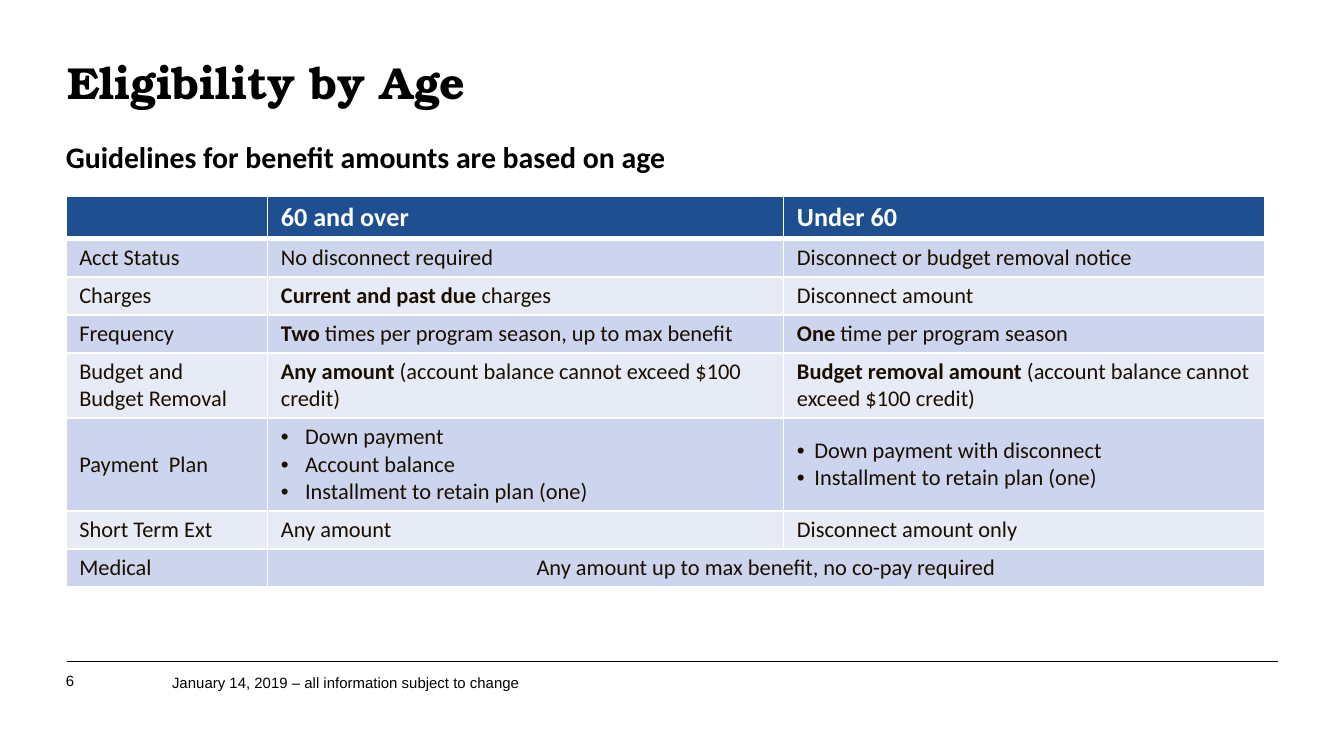
from dataclasses import dataclass

from lxml.etree import SubElement
from pptx import Presentation
from pptx.dml.color import RGBColor
from pptx.enum.shapes import MSO_CONNECTOR
from pptx.enum.text import MSO_ANCHOR as Anchor, MSO_AUTO_SIZE as AutoSize, PP_ALIGN as Align
from pptx.oxml.ns import qn
from pptx.util import Emu, Pt

EMU_PER_PX = 9144  # 100 px to the inch


@dataclass(frozen=True)
class Style:
    font: str
    size: int
    color: str
    bold: bool = False


@dataclass(frozen=True)
class Theme:
    black: str = "000000"
    white: str = "FFFFFF"
    header_fill: str = "1D4F91"
    bands: tuple[str, str] = ("CCD5ED", "E7EBF6")
    title: Style = Style("TeX Gyre Bonum", 24, "000000", True)
    subtitle: Style = Style("Calibri", 16, "000000", True)
    header: Style = Style("Calibri", 14, "FFFFFF", True)
    cell: Style = Style("Calibri", 12, "1A0E00")
    footer: Style = Style("Arial", 8, "000000")


@dataclass(frozen=True)
class Box:
    left: int
    top: int
    width: int
    height: int

    def emu(self) -> tuple[Emu, ...]:
        return tuple(px(n) for n in (self.left, self.top, self.width, self.height))


@dataclass(frozen=True)
class Cell:
    """Lines of a cell; lead is bold text before the first, indent makes bullets."""
    lines: tuple[str, ...]
    lead: str = ""
    indent: int = 0
    span: int = 1
    align: Align = Align.LEFT


@dataclass(frozen=True)
class Row:
    height: int
    cells: tuple[Cell, ...]


THEME = Theme()
COLUMNS = (150, 384, 358)
ROWS = (
    Row(31, (Cell(("",)), Cell(("60 and over",)), Cell(("Under 60",)))),
    Row(28, (Cell(("Acct Status",)), Cell(("No disconnect required",)),
             Cell(("Disconnect or budget removal notice",)))),
    Row(28, (Cell(("Charges",)), Cell(("charges",), lead="Current and past due "),
             Cell(("Disconnect amount",)))),
    Row(28, (Cell(("Frequency",)),
             Cell((" times per program season, up to max benefit",), lead="Two"),
             Cell((" time per program season",), lead="One"))),
    Row(48, (Cell(("Budget and", "Budget Removal")),
             Cell((" (account balance cannot exceed $100 credit)",), lead="Any amount"),
             Cell(("(account balance cannot exceed $100 credit)",),
                  lead="Budget removal amount "))),
    Row(68, (Cell(("Payment  Plan",)),
             Cell(("Down payment", "Account balance", "Installment to retain plan (one)"),
                  indent=18),
             Cell(("Down payment with disconnect", "Installment to retain plan (one)"),
                  indent=13))),
    Row(28, (Cell(("Short Term Ext",)), Cell(("Any amount",)),
             Cell(("Disconnect amount only",)))),
    Row(28, (Cell(("Medical",)),
             Cell(("Any amount up to max benefit, no co-pay required",),
                  span=2, align=Align.CENTER))),
)


def px(n: int) -> Emu:
    return Emu(n * EMU_PER_PX)


def rgb(color: str) -> RGBColor:
    return RGBColor.from_string(color)


def format_run(r, style: Style, bold: bool) -> None:
    r.font.name, r.font.size, r.font.bold = style.font, Pt(style.size), bold
    r.font.color.rgb = rgb(style.color)


def set_text(sp, text: str, style: Style, box: Box):
    """Place a shape and give it one left-aligned paragraph without insets."""
    sp.left, sp.top, sp.width, sp.height = box.emu()
    tf = sp.text_frame
    tf.text = text
    tf.word_wrap, tf.auto_size, tf.vertical_anchor = True, AutoSize.NONE, Anchor.TOP
    tf.margin_left = tf.margin_top = tf.margin_right = tf.margin_bottom = 0
    p = tf.paragraphs[0]
    p.alignment, p.space_before = Align.LEFT, Pt(0)
    format_run(p.runs[0], style, style.bold)
    return p


def set_bullet(p, indent: int) -> None:
    """Hang the paragraph by indent with a bullet, or remove the bullet at 0."""
    ppr = p._p.get_or_add_pPr()
    ppr.set("marL", str(px(indent)))
    ppr.set("indent", str(-px(indent)))
    if indent:
        SubElement(ppr, qn("a:buFont"), typeface="Arial")
        SubElement(ppr, qn("a:buChar"), char="•")
    else:
        SubElement(ppr, qn("a:buNone"))


def set_borders(tc, top: int, bottom: int) -> None:
    tcpr = tc._tc.get_or_add_tcPr()
    for side, width in (("L", 1), ("R", 1), ("T", top), ("B", bottom)):
        ln = SubElement(tcpr, qn(f"a:ln{side}"), w=str(Pt(width)))
        fill = SubElement(ln, qn("a:solidFill"))
        SubElement(fill, qn("a:srgbClr"), val=THEME.white)


def fill_cell(tc, cell: Cell, style: Style) -> None:
    tf = tc.text_frame
    tf.text = "\n".join(cell.lines)
    for i, p in enumerate(tf.paragraphs):
        p.alignment = cell.align
        if cell.indent:
            set_bullet(p, cell.indent)
        if cell.lead and i == 0:
            p.text = cell.lead
            p.add_run().text = cell.lines[0]
        for j, r in enumerate(p.runs):
            format_run(r, style, style.bold or (j == 0 and len(p.runs) > 1))
        if not p.runs:
            SubElement(p._p, qn("a:endParaRPr"), sz=str(style.size * 100))


def add_age_table(s, left: int, top: int) -> None:
    box = Box(left, top, sum(COLUMNS), sum(row.height for row in ROWS))
    table = s.shapes.add_table(len(ROWS), len(COLUMNS), *box.emu()).table
    for column, width in zip(table.columns, COLUMNS):
        column.width = px(width)
    for i, row in enumerate(ROWS):
        table.rows[i].height = px(row.height)
        is_header = i == 0
        for j in range(len(COLUMNS)):
            tc = table.cell(i, j)
            set_borders(tc, top=3 if i == 1 else 1, bottom=3 if is_header else 1)
            tc.fill.solid()
            tc.fill.fore_color.rgb = rgb(
                THEME.header_fill if is_header else THEME.bands[(i - 1) % 2])
            tc.margin_left = tc.margin_right = px(10)
            tc.margin_top = tc.margin_bottom = px(4)
            tc.vertical_anchor = Anchor.TOP if is_header else Anchor.MIDDLE
        for j, cell in enumerate(row.cells):
            tc = table.cell(i, j)
            if cell.span > 1:
                tc.merge(table.cell(i, j + cell.span - 1))
            fill_cell(tc, cell, THEME.header if is_header else THEME.cell)


def add_footer_rule(s, left: int, right: int, y: int) -> None:
    line = s.shapes.add_connector(MSO_CONNECTOR.STRAIGHT, px(left), px(y), px(right), px(y))
    line.line.color.rgb, line.line.width = rgb(THEME.black), Pt(0.5)
    SubElement(line._element.spPr, qn("a:effectLst"))


def main() -> None:
    prs = Presentation()
    prs.slide_width = px(1000)
    prs.slide_height = Emu(prs.slide_width * 9 // 16)
    s = prs.slides.add_slide(prs.slide_layouts[1])

    add_footer_rule(s, 50, 951, 492)
    p = set_text(s.shapes.title, "Eligibility by Age", THEME.title, Box(50, 47, 900, 61))
    p.line_spacing = Pt(24)
    for text, box in (
        ("January 14, 2019 – all information subject to change", Box(128, 501, 371, 29)),
        ("6", Box(49, 500, 26, 30)),
    ):
        set_text(s.shapes.add_textbox(*box.emu()), text, THEME.footer, box)
    p = set_text(s.placeholders[1], "Guidelines for benefit amounts are based on age",
                 THEME.subtitle, Box(49, 103, 871, 370))
    set_bullet(p, 0)
    add_age_table(s, 49, 146)
    prs.save("out.pptx")


if __name__ == "__main__":
    main()
